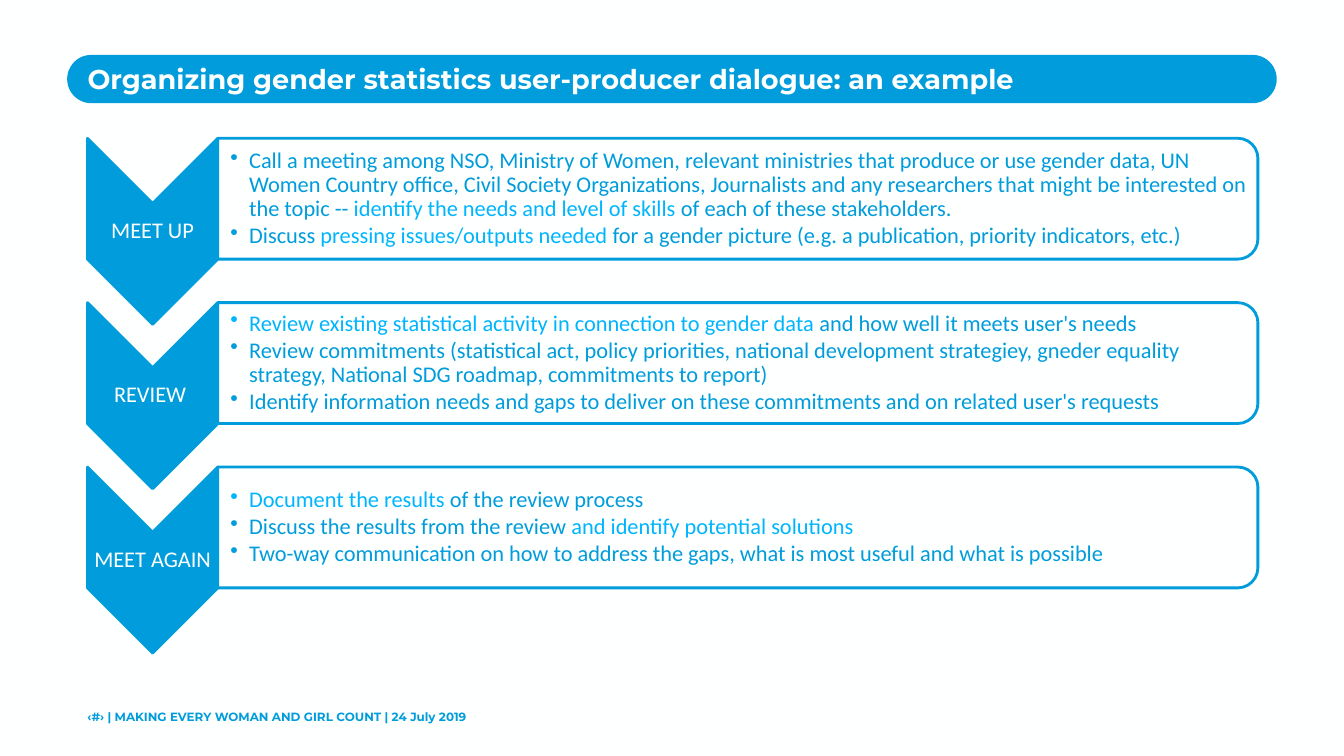
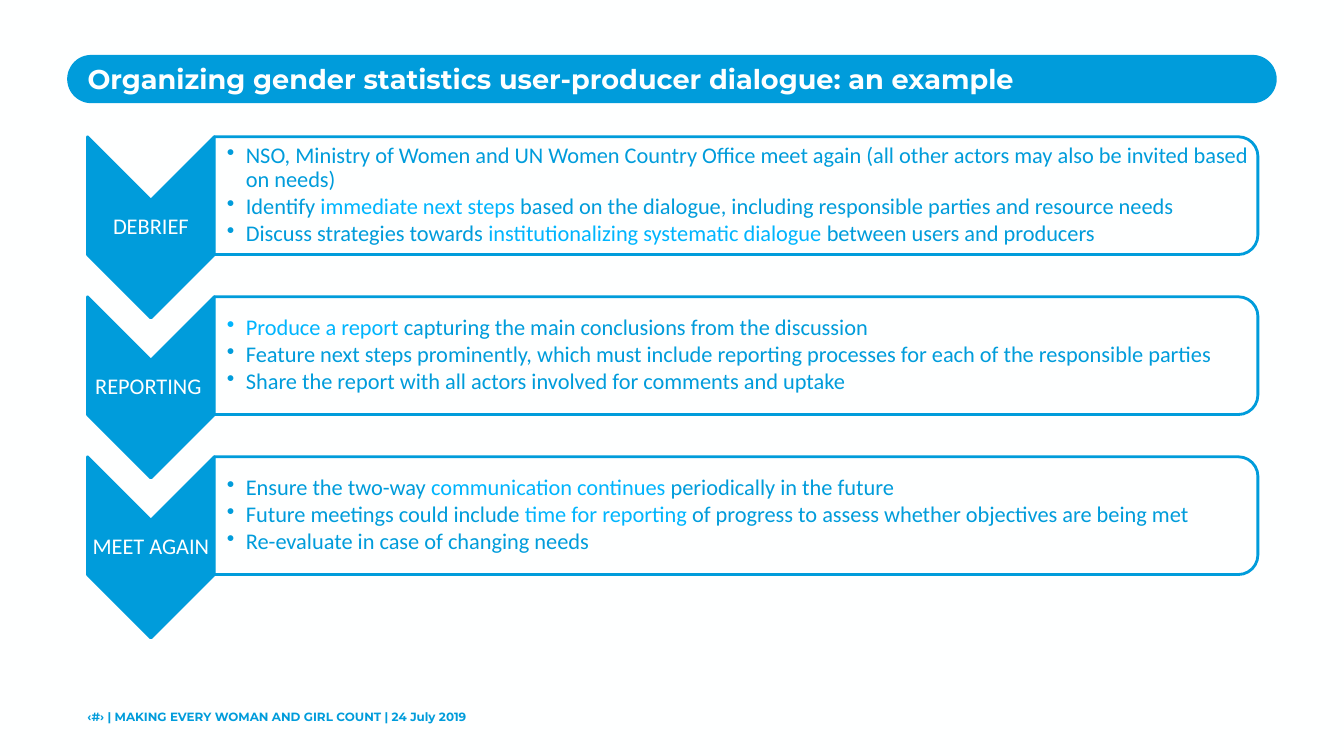
import pptx
import pptx.util
import pptx.dml.color
import pptx.enum.shapes
import pptx.enum.text
import pptx.oxml
import pptx.oxml.ns
import lxml.etree

Pt = pptx.util.Pt
Kind = pptx.enum.shapes.MSO_SHAPE
Align = pptx.enum.text.PP_ALIGN
Anchor = pptx.enum.text.MSO_ANCHOR

BLUE, BRIGHT, WHITE = "009CDB", "00B5FE", "FEFFFF"
HEAD, BODY = "Montserrat", "Calibri"
LEFT, RIGHT = 62.5, 898.5
TITLE = "Organizing gender statistics user-producer dialogue: an example"
FOOTER = "‹#› | MAKING EVERY WOMAN AND GIRL COUNT | 24 July 2019"

FIRST = [
    ("MEET UP", [
        "Call a meeting among NSO, Ministry of Women, relevant ministries that produce or use gender data, "
        "UN Women Country office, Civil Society Organizations, Journalists and any researchers that might be "
        "interested on the topic -- *identify the needs and level of skills *of each of these stakeholders.",
        "Discuss *pressing issues/outputs needed *for a gender picture "
        "(e.g. a publication, priority indicators, etc.)"]),
    ("REVIEW ", [
        "*Review existing statistical activity in connection to gender data *and how well it meets user's needs",
        "Review commitments (statistical act, policy priorities, national development strategiey, "
        "gneder equality strategy, National SDG roadmap, commitments to report)",
        "Identify information needs and gaps to deliver on these commitments and on related user's requests"]),
    ("MEET AGAIN", [
        "*Document the results *of the review process",
        "Discuss the results from the review *and identify potential solutions*",
        "Two-way communication on how to address the gaps, what is most useful and what is possible"]),
]
SECOND = [
    ("DEBRIEF", [
        "NSO, Ministry of Women and UN Women Country Office meet again "
        "(all other actors may also be invited based on needs)",
        "Identify *immediate next steps *based on the dialogue, including responsible parties and resource needs",
        "Discuss strategies towards *institutionalizing systematic dialogue *between users and producers"]),
    ("REPORTING ", [
        "*Produce a report *capturing the main conclusions from the discussion",
        "Feature next steps prominently, which must include reporting processes "
        "for each of the responsible parties",
        "Share the report with all actors involved for comments and uptake"]),
    ("MEET AGAIN", [
        "Ensure the two-way *communication continues *periodically in the future",
        "Future meetings could include *time for reporting *of progress to assess "
        "whether objectives are being met",
        "Re-evaluate in case of changing needs"]),
]


def color(code):
    return pptx.dml.color.RGBColor.from_string(code)


def paint(shape, fill, line=None, alpha=None):
    shape.shadow.inherit = False
    shape.fill.solid()
    shape.fill.fore_color.rgb = color(fill)
    if alpha:
        tint = shape.fill._xPr.find(".//" + pptx.oxml.ns.qn("a:srgbClr"))
        lxml.etree.SubElement(tint, pptx.oxml.ns.qn("a:alpha"), val=str(alpha * 1000))
    if line:
        shape.line.color.rgb = color(line)
        shape.line.width = Pt(2)
    else:
        shape.line.fill.background()


def turned(slide, kind, x, y, wide, high):
    mid, level = x + wide / 2, y + high / 2
    shape = slide.shapes.add_shape(
        kind, Pt(mid - high / 2), Pt(level - wide / 2), Pt(high), Pt(wide))
    shape.rotation = 90
    return shape


def bullet(para):
    props = para._p.get_or_add_pPr()
    props.set("marL", str(Pt(13.5)))
    props.set("indent", str(-Pt(13.5)))
    lxml.etree.SubElement(props, pptx.oxml.ns.qn("a:buChar"), char="•")


def write(shape, lines, size=16, font=BODY, ink=BLUE, bold=False, align=Align.LEFT,
          anchor=Anchor.MIDDLE, inset=(1, 1, 1, 1), dots=False, tight=None, after=0):
    frame = shape.text_frame
    frame.word_wrap = True
    frame.vertical_anchor = anchor
    (frame.margin_left, frame.margin_top,
     frame.margin_right, frame.margin_bottom) = map(Pt, inset)
    for num, line in enumerate(lines):
        para = frame.add_paragraph() if num else frame.paragraphs[0]
        if dots:
            bullet(para)
        para.alignment = align
        para.line_spacing = tight
        para.space_after = Pt(after)
        for part, text in enumerate(line.split("*")):
            if text:
                run = para.add_run()
                run.text = text
                run.font.size = Pt(size)
                run.font.name = font
                run.font.bold = bold
                run.font.color.rgb = color(BRIGHT if part % 2 else ink)


def box(slide, x, y, wide, high):
    return slide.shapes.add_textbox(Pt(x), Pt(y), Pt(wide), Pt(high))


def frame(slide):
    back = slide.background.fill
    back.solid()
    back.fore_color.rgb = color(WHITE)
    bar = slide.shapes.add_shape(
        Kind.ROUNDED_RECTANGLE, Pt(48), Pt(39.2), Pt(864), Pt(34.5))
    bar.adjustments[0] = 0.5
    paint(bar, BLUE)
    write(bar, [TITLE], size=19.4, font=HEAD, ink=WHITE, bold=True, inset=(9.5, 0, 9.5, 0))
    write(box(slide, LEFT, 507, 512, 10), [FOOTER], size=8.5, font=HEAD, bold=True,
          anchor=Anchor.TOP, inset=(0, 0, 0, 0))


def step(slide, x, y, wide, arrow, label, lines):
    long = arrow / 0.7
    high = long - arrow / 2
    mark = turned(slide, Kind.CHEVRON, x, y, arrow, long)
    paint(mark, BLUE, BLUE)
    write(box(slide, x, y + arrow / 2, arrow, long - arrow), [label], ink=WHITE,
          align=Align.CENTER, tight=0.9)
    panel = turned(slide, Kind.ROUND_2_SAME_RECTANGLE, x + arrow, y, wide - arrow, high)
    paint(panel, WHITE, BLUE, alpha=90)
    write(box(slide, x + arrow, y + 4, wide - arrow - 4, high - 8), lines,
          inset=(9, 1, 1, 1), dots=True, tight=0.9, after=2)


def flow(deck, steps, top, arrow, pitch):
    slide = deck.slides.add_slide(deck.slide_layouts[6])
    frame(slide)
    for row, (label, lines) in enumerate(steps):
        step(slide, LEFT, top + row * pitch, RIGHT - LEFT, arrow, label, lines)


def main():
    deck = pptx.Presentation()
    deck.slide_width, deck.slide_height = Pt(960), Pt(540)
    flow(deck, FIRST, top=98.8, arrow=93, pitch=117.4)
    flow(deck, SECOND, top=97.7, arrow=90.6, pitch=114.3)
    deck.save("out.pptx")


if __name__ == "__main__":
    main()
